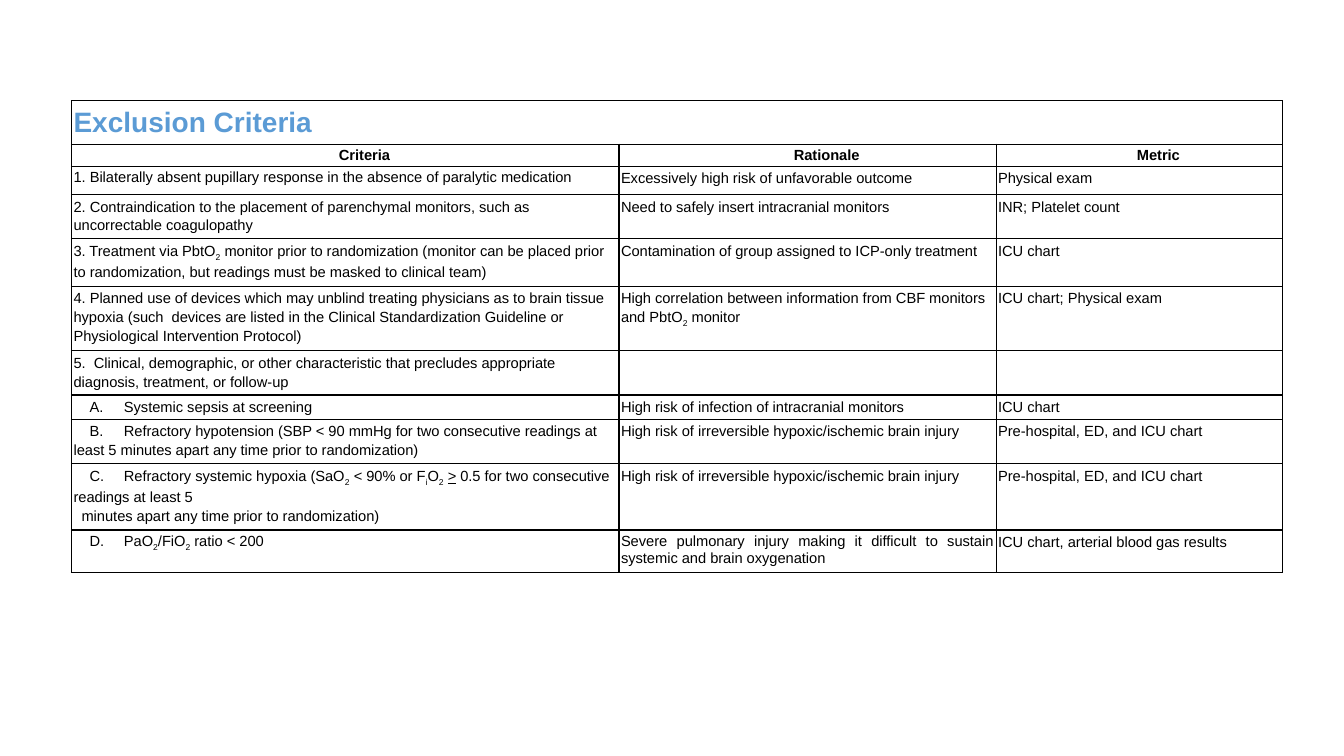
from pptx import Presentation
from pptx.dml.color import RGBColor
from pptx.enum.text import PP_ALIGN
from pptx.oxml.ns import qn
from pptx.util import Inches, Pt
from lxml.etree import SubElement

BLUE = RGBColor(0x5B, 0x9B, 0xD5)
BLACK = RGBColor(0, 0, 0)
SUBS = ("2", "i")

WIDTHS = [5.43, 3.74, 2.84]
HEIGHTS = [0.43, 0.22, 0.28, 0.44, 0.47, 0.64, 0.44, 0.24, 0.44, 0.66, 0.42]

# "|" sets off subscripts and the underlined sign, a line break starts a paragraph
ROWS = [
    ["Exclusion Criteria", "", ""],
    ["Criteria", "Rationale", "Metric"],
    ["1. Bilaterally absent pupillary response in the absence of paralytic medication",
     "Excessively high risk of unfavorable outcome", "Physical exam"],
    ["2. Contraindication to the placement of parenchymal monitors, such as "
     "uncorrectable coagulopathy",
     "Need to safely insert intracranial monitors", "INR; Platelet count"],
    ["3. Treatment via PbtO|2| monitor prior to randomization (monitor can be placed "
     "prior to randomization, but readings must be masked to clinical team)",
     "Contamination of group assigned to ICP-only treatment", "ICU chart"],
    ["4. Planned use of devices which may unblind treating physicians as to brain "
     "tissue hypoxia (such  devices are listed in the Clinical Standardization "
     "Guideline or Physiological Intervention Protocol)",
     "High correlation between information from CBF monitors and PbtO|2| monitor",
     "ICU chart; Physical exam"],
    ["5.  Clinical, demographic, or other characteristic that precludes appropriate "
     "diagnosis, treatment, or follow-up", "", ""],
    ["A.\tSystemic sepsis at screening",
     "High risk of infection of intracranial monitors", "ICU chart"],
    ["B.\tRefractory hypotension (SBP < 90 mmHg for two consecutive readings at "
     "least 5 minutes apart any time prior to randomization)",
     "High risk of irreversible hypoxic/ischemic brain injury",
     "Pre-hospital, ED, and ICU chart"],
    ["C.\tRefractory systemic hypoxia (SaO|2| < 90% or F|i|O|2| |>| 0.5 for two "
     "consecutive readings at least 5\nminutes apart any time prior to randomization)",
     "High risk of irreversible hypoxic/ischemic brain injury",
     "Pre-hospital, ED, and ICU chart"],
    ["D.\tPaO|2|/FiO|2| ratio < 200",
     "Severe pulmonary injury making it difficult to sustain systemic and brain "
     "oxygenation", "ICU chart, arterial blood gas results"],
]
LAST = len(ROWS) - 1
JUSTIFIED = [(2, 0), (LAST, 0), (LAST, 1)]

TITLE = {"name": "Arial", "size": Pt(20), "bold": True}
HEAD = {"name": "Arial", "size": Pt(10.5), "bold": True}
BODY = {"name": "Arial", "size": Pt(10.5), "bold": False}
INSETS = ("margin_left", "margin_top", "margin_right", "margin_bottom")


def frame(cell):
    """Draw a thin black line on all four sides of the cell."""
    props = cell._tc.get_or_add_tcPr()
    for i, side in enumerate(("a:lnL", "a:lnR", "a:lnT", "a:lnB")):
        line = props.makeelement(qn(side), {"w": str(Pt(1))})
        fill = SubElement(line, qn("a:solidFill"))
        SubElement(fill, qn("a:srgbClr"), val=str(BLACK))
        props.insert(i, line)


def write(para, text, style, color):
    for part in text.split("|"):
        run = para.add_run()
        run.text = part
        for key, value in style.items():
            setattr(run.font, key, value)
        run.font.color.rgb = color
        if part in SUBS:
            run.font._element.set("baseline", "-25000")
        if part == ">":
            run.font.underline = True


deck = Presentation()
deck.slide_width, deck.slide_height = Inches(13.33), Inches(7.5)
slide = deck.slides.add_slide(deck.slide_layouts[6])

table = slide.shapes.add_table(
    len(ROWS), len(WIDTHS), Inches(0.71), Inches(1),
    Inches(sum(WIDTHS)), Inches(sum(HEIGHTS))).table
table.first_row = table.horz_banding = False
for column, width in zip(table.columns, WIDTHS):
    column.width = Inches(width)
for row, height in zip(table.rows, HEIGHTS):
    row.height = Inches(height)
table.cell(0, 0).merge(table.cell(0, 2))

for r, row in enumerate(ROWS):
    style = {0: TITLE, 1: HEAD}.get(r, BODY)
    color = BLUE if r == 0 else BLACK
    for c, text in enumerate(row):
        cell = table.cell(r, c)
        cell.fill.background()
        frame(cell)
        for inset in INSETS:
            setattr(cell, inset, Inches(0.02))
        if not text:
            continue
        for n, line in enumerate(text.split("\n")):
            box = cell.text_frame
            para = box.add_paragraph() if n else box.paragraphs[0]
            para.line_spacing = 1.15
            props = para._p.get_or_add_pPr()
            if r == 1:
                para.alignment = PP_ALIGN.CENTER
                para.line_spacing = 1.07
                props.set("indent", str(Inches(0.38)))
            if (r, c) in JUSTIFIED:
                para.alignment = PP_ALIGN.JUSTIFY
                para.line_spacing = 1.07
            if (r, c) == (LAST, 0):
                para.space_after = Pt(3)
            if n:
                props.set("indent", str(Inches(0.08)))
            if "\t" in line:
                props.set("indent", str(Inches(0.16)))
                tabs = SubElement(props, qn("a:tabLst"))
                SubElement(tabs, qn("a:tab"), pos=str(Inches(0.45)), algn="l")
            write(para, line, style, color)

deck.save("out.pptx")
